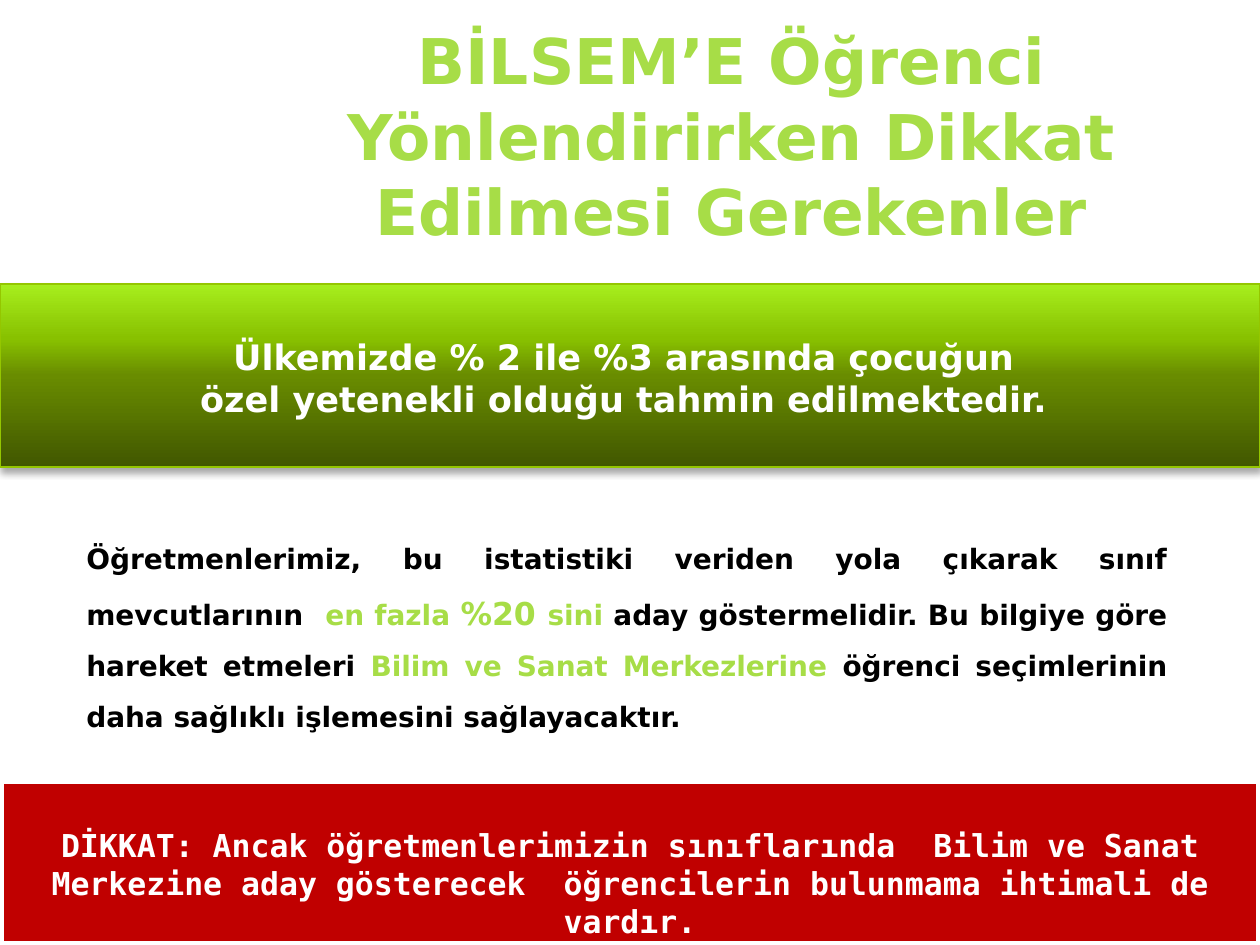
from dataclasses import dataclass
from typing import Optional

from lxml.etree import SubElement
from pptx import Presentation
from pptx.dml.color import RGBColor as RGB
from pptx.enum.shapes import MSO_SHAPE as Shape
from pptx.enum.text import MSO_ANCHOR as Anchor, PP_ALIGN as Align
from pptx.oxml import parse_xml
from pptx.oxml.ns import nsdecls, qn
from pptx.util import Pt

EMU_PER_PX = 914400 / 126


@dataclass(frozen=True)
class Theme:
    lime: str = "A7DD47"
    white: str = "FFFFFF"
    black: str = "000000"
    red: str = "C00000"
    band_line: str = "94C600"
    band_stops: tuple = ((0, "415700"), (50, "698C00"), (70, "88C100"), (100, "A7EE1D"))
    sans: str = "DejaVu Sans"
    mono: str = "DejaVu Sans Mono"
    title: int = 36
    band: int = 20
    large: int = 18
    body: int = 16


T = Theme()


@dataclass(frozen=True)
class Run:
    text: str
    size: int
    color: str
    font: str = T.sans


@dataclass(frozen=True)
class Box:
    x: int
    y: int
    w: int
    h: int
    paragraphs: tuple
    align: Align = Align.CENTER
    anchor: Anchor = Anchor.TOP
    spacing: Optional[float] = None
    top_inset: int = 6


@dataclass(frozen=True)
class Panel:
    box: Box
    line: str
    line_width: float
    fill: Optional[str] = None
    stops: tuple = ()


def px(n: int) -> int:
    return round(n * EMU_PER_PX)


def frame(box: Box) -> tuple:
    return tuple(px(n) for n in (box.x, box.y, box.w, box.h))


def write(tf, box: Box) -> None:
    tf.word_wrap = True
    tf.vertical_anchor = box.anchor
    tf.margin_top = px(box.top_inset)
    for i, runs in enumerate(box.paragraphs):
        p = tf.add_paragraph() if i else tf.paragraphs[0]
        p.alignment = box.align
        if box.spacing:
            p.line_spacing = box.spacing
        for run in runs:
            r = p.add_run()
            r.text = run.text
            r.font.name = run.font
            r.font.size = Pt(run.size)
            r.font.bold = True
            r.font.color.rgb = RGB.from_string(run.color)


def add_text(s, box: Box) -> None:
    write(s.shapes.add_textbox(*frame(box)).text_frame, box)


def fill_gradient(sp, stops: tuple) -> None:
    sp.fill.gradient()
    sp.fill.gradient_angle = 90
    gs_lst = sp._element.spPr.find(qn("a:gradFill")).find(qn("a:gsLst"))
    for gs in list(gs_lst):
        gs_lst.remove(gs)
    for pos, color in stops:
        gs = SubElement(gs_lst, qn("a:gs"), pos=str(pos * 1000))
        SubElement(gs, qn("a:srgbClr"), val=color)


def add_shadow(sp) -> None:
    effects = sp._element.spPr.find(qn("a:effectLst"))
    effects.append(parse_xml(
        f'<a:outerShdw {nsdecls("a")} blurRad="{Pt(4)}" dist="{Pt(3)}" '
        f'dir="5400000" rotWithShape="0"><a:srgbClr val="{T.black}">'
        '<a:alpha val="35000"/></a:srgbClr></a:outerShdw>'))


def add_panel(s, panel: Panel) -> None:
    sp = s.shapes.add_shape(Shape.RECTANGLE, *frame(panel.box))
    sp.shadow.inherit = False
    if panel.stops:
        fill_gradient(sp, panel.stops)
        add_shadow(sp)
    else:
        sp.fill.solid()
        sp.fill.fore_color.rgb = RGB.from_string(panel.fill)
    sp.line.color.rgb = RGB.from_string(panel.line)
    sp.line.width = Pt(panel.line_width)
    write(sp.text_frame, panel.box)


TITLE = Box(203, 26, 1057, 218, (
    (Run("BİLSEM’E Öğrenci Yönlendirirken Dikkat Edilmesi Gerekenler", T.title, T.lime),),
), anchor=Anchor.MIDDLE)

BAND = Panel(Box(0, 284, 1260, 183, (
    (Run("Ülkemizde % 2 ile %3 arasında çocuğun ", T.band, T.white),),
    (Run("özel yetenekli olduğu tahmin edilmektedir. ", T.band, T.white),),
), top_inset=51), T.band_line, 0.75, stops=T.band_stops)

ADVICE = Box(74, 519, 1106, 222, ((
    Run("Öğretmenlerimiz, bu istatistiki veriden yola çıkarak sınıf mevcutlarının ",
        T.body, T.black),
    Run(" ", T.large, T.black),
    Run("en fazla ", T.body, T.lime),
    Run("%20 ", T.large, T.lime),
    Run("sini ", T.body, T.lime),
    Run("aday göstermelidir. Bu bilgiye göre hareket etmeleri ", T.body, T.black),
    Run("Bilim ve Sanat Merkezlerine ", T.body, T.lime),
    Run("öğrenci seçimlerinin daha sağlıklı işlemesini sağlayacaktır.", T.body, T.black),
),), align=Align.JUSTIFY, spacing=1.5)

WARNING = Panel(Box(0, 780, 1260, 165, (
    (Run("DİKKAT: Ancak öğretmenlerimizin sınıflarında  Bilim ve Sanat Merkezine aday "
         "gösterecek  öğrencilerin bulunmama ihtimali de vardır.",
         T.large, T.white, T.mono),),
), top_inset=46), T.white, 5, fill=T.red)


def main() -> None:
    prs = Presentation()
    prs.slide_width, prs.slide_height = px(1260), px(945)
    s = prs.slides.add_slide(prs.slide_layouts[6])
    add_text(s, TITLE)
    add_panel(s, BAND)
    add_text(s, ADVICE)
    add_panel(s, WARNING)
    prs.save("out.pptx")


if __name__ == "__main__":
    main()
